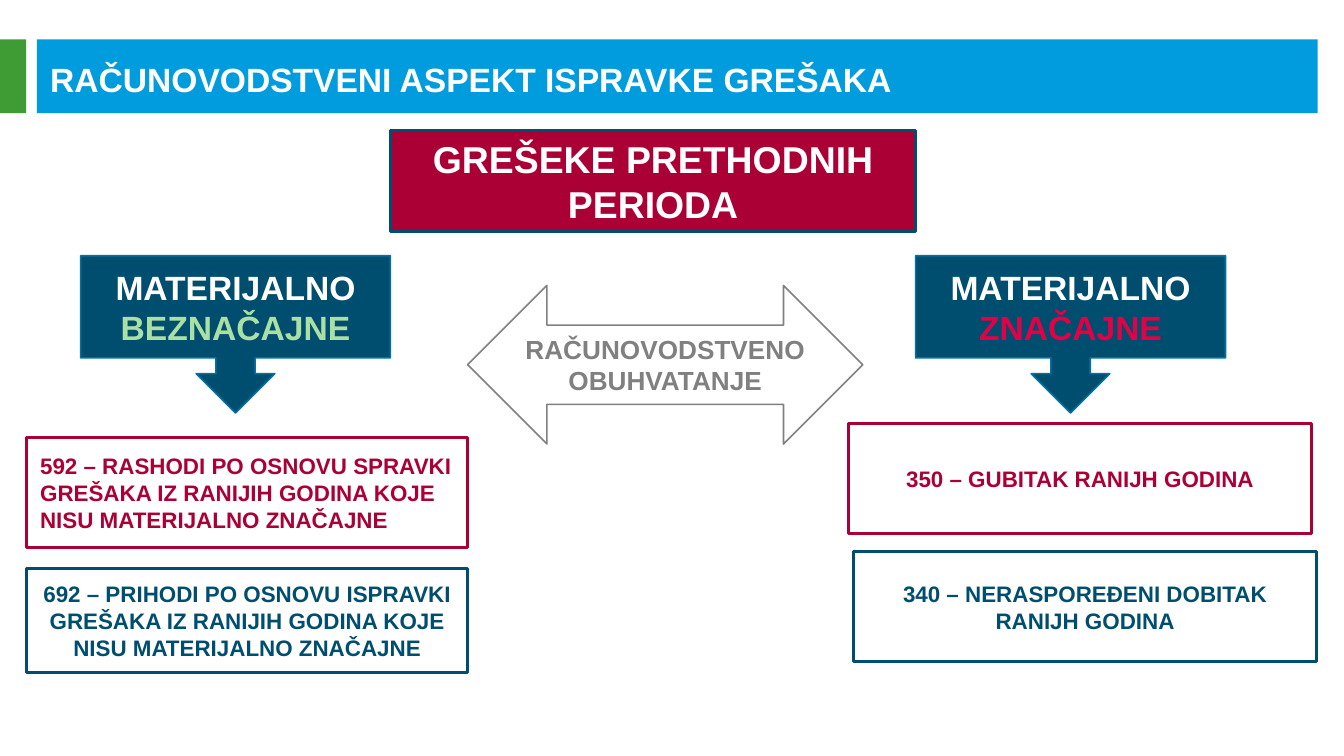
import pptx
import pptx.util
import pptx.dml.color
import pptx.enum.shapes
import pptx.enum.text

THEME = {
    "font": "Arial",
    "white": "FFFFFF", "blue": "009CDE", "green": "3F9C35", "crimson": "AB0035",
    "navy": "004E6F", "edge": "0073A4", "grey": "808080",
    "mint": "ABE0A5", "red": "E40046",
    "headline": 20, "title": 18, "arrow": 14, "account": 12,
    "thin": 0.85, "thick": 1.5,
}
SHAPES = pptx.enum.shapes.MSO_SHAPE
ALIGN = pptx.enum.text.PP_ALIGN

# A 16:9 page
deck = pptx.Presentation()
deck.slide_width = pptx.util.Inches(10)
deck.slide_height = deck.slide_width * 9 // 16
page = deck.slides.add_slide(deck.slide_layouts[6])

# The grid has 100 columns; rows are as high as columns are wide
UNIT = deck.slide_width / 100


def color(name):
    return pptx.dml.color.RGBColor.from_string(THEME[name])


def add_box(kind, cells, fill=None, line=None, weight="thick", paragraphs=(),
            size="account", align=ALIGN.CENTER, after=0):
    """Draw a shape; each paragraph is a list of (text, colour) spans."""
    box = page.shapes.add_shape(kind, *[round(cell * UNIT) for cell in cells])
    box.shadow.inherit = False
    if fill:
        box.fill.solid()
        box.fill.fore_color.rgb = color(fill)
    else:
        box.fill.background()
    if line:
        box.line.color.rgb = color(line)
        box.line.width = pptx.util.Pt(THEME[weight])
    else:
        box.line.fill.background()
    frame = box.text_frame
    frame.word_wrap = True
    frame.vertical_anchor = pptx.enum.text.MSO_ANCHOR.MIDDLE
    for index, spans in enumerate(paragraphs):
        para = frame.add_paragraph() if index else frame.paragraphs[0]
        para.alignment = align
        para.space_after = pptx.util.Pt(after)
        for text, ink in spans:
            span = para.add_run()
            span.text = text
            span.font.name = THEME["font"]
            span.font.size = pptx.util.Pt(THEME[size])
            span.font.bold = True
            span.font.color.rgb = color(ink)


# Title band
add_box(SHAPES.RECTANGLE, (2.75, 2.93, 95.3, 5.5), fill="blue")
add_box(SHAPES.RECTANGLE, (0, 2.93, 1.95, 5.5), fill="green")
add_box(SHAPES.RECTANGLE, (2.75, 3, 96.5, 5.8), size="title", align=ALIGN.LEFT,
        paragraphs=[[("RAČUNOVODSTVENI ASPEKT ISPRAVKE GREŠAKA", "white")]])

# Headline
add_box(SHAPES.RECTANGLE, (29.05, 9.7, 39.1, 7.5), fill="crimson", line="navy",
        size="headline", after=6,
        paragraphs=[[("GREŠEKE PRETHODNIH PERIODA", "white")]])

# Double arrow between the two sides
add_box(SHAPES.LEFT_RIGHT_ARROW, (34.8, 21.24, 29.4, 11.8), line="grey",
        weight="thin", size="arrow",
        paragraphs=[[("RAČUNOVODSTVENO OBUHVATANJE", "grey")]])

# Materiality callouts
for left, word, ink in [(6, "BEZNAČAJNE", "mint"), (68.13, "ZNAČAJNE", "red")]:
    add_box(SHAPES.DOWN_ARROW_CALLOUT, (left, 19.03, 23.05, 11.7), fill="navy",
            line="edge", weight="thin", size="title",
            paragraphs=[[("MATERIJALNO ", "white"), (word, ink)]])

# Account boxes
accounts = [
    ((2, 32.54, 32.8, 8.2), "crimson", ALIGN.LEFT, 0,
     ["592 – RASHODI PO OSNOVU SPRAVKI GREŠAKA IZ RANIJIH GODINA KOJE",
      "NISU MATERIJALNO ZNAČAJNE"]),
    ((2, 42.32, 32.8, 7.7), "navy", ALIGN.CENTER, 6,
     ["692 – PRIHODI PO OSNOVU ISPRAVKI GREŠAKA IZ RANIJIH GODINA KOJE "
      "NISU MATERIJALNO ZNAČAJNE"]),
    ((63.15, 31.5, 34.45, 8.2), "crimson", ALIGN.CENTER, 6,
     ["350 – GUBITAK RANIJH GODINA"]),
    ((63.52, 41.04, 34.45, 8.2), "navy", ALIGN.CENTER, 6,
     ["340 – NERASPOREĐENI DOBITAK RANIJH GODINA"]),
]
for cells, ink, align, after, texts in accounts:
    add_box(SHAPES.RECTANGLE, cells, line=ink, align=align, after=after,
            paragraphs=[[(text, ink)] for text in texts])

deck.save("out.pptx")
